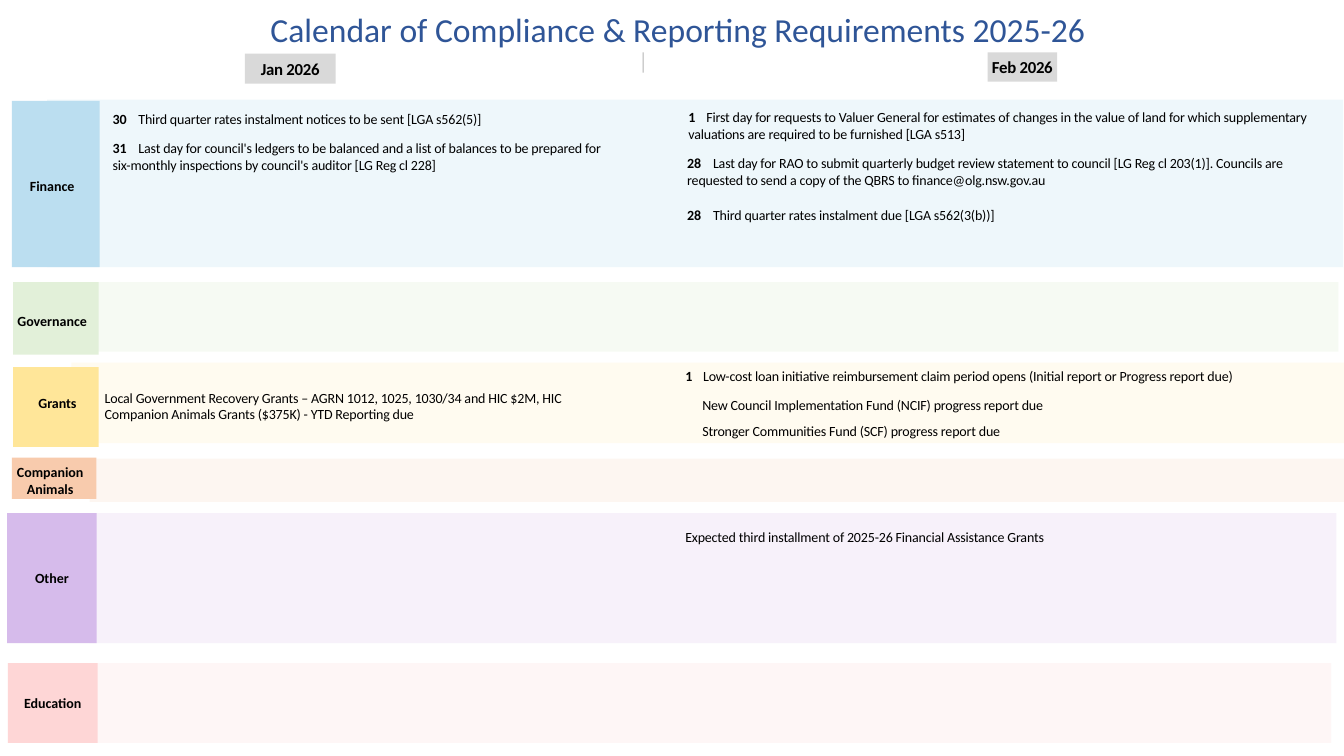
from lxml.etree import SubElement
from pptx import Presentation
from pptx.dml.color import RGBColor
from pptx.enum.shapes import MSO_CONNECTOR, MSO_SHAPE
from pptx.enum.text import MSO_ANCHOR, MSO_AUTO_SIZE, PP_ALIGN
from pptx.oxml.ns import qn
from pptx.util import Cm, Pt

FONT = "Calibri"
BLACK = RGBColor(0x00, 0x00, 0x00)
TITLE_BLUE = RGBColor(0x2F, 0x55, 0x97)
MONTH_GREY = RGBColor(0xD9, 0xD9, 0xD9)
BLUE, BLUE_BAND = RGBColor(0xBB, 0xDE, 0xF0), RGBColor(0xAD, 0xD8, 0xED)
GREEN, GREEN_BAND = RGBColor(0xE2, 0xF0, 0xD9), RGBColor(0xD3, 0xE8, 0xC6)
YELLOW, YELLOW_BAND = RGBColor(0xFF, 0xE6, 0x99), RGBColor(0xFF, 0xEC, 0xB7)
ORANGE, ORANGE_BAND = RGBColor(0xF8, 0xCB, 0xAD), RGBColor(0xF9, 0xD5, 0xBD)
PURPLE, PURPLE_BAND = RGBColor(0xD6, 0xBB, 0xEB), RGBColor(0xD7, 0xBC, 0xEA)
PINK = RGBColor(0xFE, 0xD6, 0xD6)

# Boxes are left, top, width, height in centimetres
# Name, band colour, band box, tile colour, tile box, caption box (None: in the tile)
SECTIONS = [
    ("Finance", BLUE_BAND, (1.19, 2.51, 32.66, 4.22),
     BLUE, (0.3, 2.54, 2.21, 4.19), (-0.03, 4.42, 2.69, 0.51)),
    ("Governance", GREEN_BAND, (2.36, 7.11, 31.37, 1.75),
     GREEN, (0.33, 7.11, 2.16, 1.83), (-0.03, 7.82, 2.69, 0.51)),
    ("Grants", YELLOW_BAND, (1.8, 9.14, 32.54, 2.03),
     YELLOW, (0.33, 9.25, 2.16, 2.01), (0.33, 9.93, 2.24, 0.46)),
    ("Companion Animals", ORANGE_BAND, (2.26, 11.56, 32.03, 1.09),
     ORANGE, (0.3, 11.53, 2.13, 1.04), (-0.08, 11.76, 2.69, 0.71)),
    ("Other", PURPLE_BAND, (2.26, 12.93, 31.42, 3.28),
     PURPLE, (0.18, 12.93, 2.26, 3.28), None),
    ("Education", PINK, (2.26, 16.71, 31.29, 2.01),
     PINK, (0.2, 16.71, 2.26, 2.01), None),
]

MONTHS = [
    ("Jan 2026", (6.17, 1.35, 2.29, 0.76)),
    ("Feb 2026", (24.89, 1.32, 1.75, 0.74)),
]

# Day, text, box
ENTRIES = [
    ("30", "Third quarter rates instalment notices to be sent [LGA s562(5)]",
     (2.84, 2.79, 11.23, 0.43)),
    ("31", "Last day for council's ledgers to be balanced and a list of balances "
     "to be prepared for six-monthly inspections by council's auditor [LG Reg cl 228]",
     (2.84, 3.51, 12.4, 0.86)),
    ("1", "First day for requests to Valuer General for estimates of changes in the value "
     "of land for which supplementary valuations are required to be furnished [LGA s513]",
     (17.35, 2.74, 16.66, 0.86)),
    ("28", "Last day for RAO to submit quarterly budget review statement to council "
     "[LG Reg cl 203(1)]. Councils are requested to send a copy of the QBRS to "
     "finance@olg.nsw.gov.au", (17.32, 3.89, 16.23, 0.86)),
    ("28", "Third quarter rates instalment due [LGA s562(3(b))]",
     (17.32, 5.21, 10.08, 0.43)),
    ("", "Local Government Recovery Grants – AGRN 1012, 1025, 1030/34 and HIC $2M, HIC "
     "Companion Animals Grants ($375K) - YTD Reporting due", (2.64, 9.8, 12.04, 0.86)),
    ("1", "Low-cost loan initiative reimbursement claim period opens "
     "(Initial report or Progress report due)", (17.27, 9.25, 14.76, 0.43)),
    ("", "New Council Implementation Fund (NCIF) progress report due",
     (17.7, 9.98, 11.73, 0.43)),
    ("", "Stronger Communities Fund (SCF) progress report due",
     (17.7, 10.64, 11.73, 0.43)),
    ("", "Expected third installment of 2025-26 Financial Assistance Grants",
     (17.27, 13.31, 12.98, 0.43)),
]


def to_cm(box):
    return [Cm(length) for length in box]


def set_opacity(element, percent):
    color = next(element.iter(qn("a:srgbClr")))
    SubElement(color, qn("a:alpha"), val=str(percent * 1000))


def set_font(font, size, color=BLACK, bold=None):
    font.name, font.size, font.bold = FONT, Pt(size), bold
    font.color.rgb = color


def prepare_frame(shape, wrap=True):
    frame = shape.text_frame
    frame.word_wrap = wrap
    frame.vertical_anchor = MSO_ANCHOR.MIDDLE
    frame.margin_left = frame.margin_right = 0
    frame.margin_top = frame.margin_bottom = 0
    return frame


def add_span(para, text, spacing):
    span = para.add_run()
    span.text = text
    span._r.get_or_add_rPr().set("spc", str(spacing))
    return span


def add_rect(page, box, color, opacity=100):
    rect = page.shapes.add_shape(MSO_SHAPE.RECTANGLE, *to_cm(box))
    rect.shadow.inherit = False
    rect.fill.solid()
    rect.fill.fore_color.rgb = color
    rect.line.fill.background()
    if opacity < 100:
        set_opacity(rect._element.spPr, opacity)
    return rect


def add_caption(shape, text):
    para = prepare_frame(shape).paragraphs[0]
    para.text = text
    para.alignment = PP_ALIGN.CENTER
    set_font(para.font, 10, bold=True)


def add_month(page, text, box):
    frame = prepare_frame(add_rect(page, box, MONTH_GREY), wrap=False)
    para = frame.paragraphs[0]
    para.alignment = PP_ALIGN.CENTER
    set_font(para.font, 12, bold=True)
    add_span(para, text, -20)


def add_entry(page, day, text, box):
    frame = prepare_frame(page.shapes.add_textbox(*to_cm(box)))
    frame.auto_size = MSO_AUTO_SIZE.SHAPE_TO_FIT_TEXT
    para = frame.paragraphs[0]
    if day:
        # The text after the day starts at a tab stop
        stops = SubElement(para._p.get_or_add_pPr(), qn("a:tabLst"))
        stop = Cm(0.65 if len(day) == 2 else 0.45)
        SubElement(stops, qn("a:tab"), pos=str(stop), algn="l")
        add_span(para, day, -10).font.bold = True
        text = "\t" + text
    add_span(para, text, -10)
    set_font(para.font, 10)


def add_divider(page):
    x = Cm(16.21)
    divider = page.shapes.add_connector(
        MSO_CONNECTOR.STRAIGHT, x, Cm(1.32), x, Cm(1.83))
    divider.line.color.rgb = BLACK
    divider.line.width = Pt(0.75)
    set_opacity(divider._element.spPr, 30)
    SubElement(divider._element.spPr, qn("a:effectLst"))


def format_title(page):
    title = page.shapes.title
    title.left, title.top, title.width, title.height = to_cm((6.2, 0.1, 21.77, 1.27))
    frame = title.text_frame
    frame.text = "Calendar of Compliance & Reporting Requirements 2025-26"
    frame.vertical_anchor = MSO_ANCHOR.TOP
    frame.auto_size = MSO_AUTO_SIZE.SHAPE_TO_FIT_TEXT
    para = frame.paragraphs[0]
    para.alignment = PP_ALIGN.CENTER
    set_font(para.font, 24, TITLE_BLUE)


def main():
    deck = Presentation()
    deck.slide_width, deck.slide_height = Cm(33.87), Cm(19.05)
    page = deck.slides.add_slide(deck.slide_layouts[5])

    # Heading row
    format_title(page)
    for month, box in MONTHS:
        add_month(page, month, box)
    add_divider(page)

    # Section bands with their name tiles
    for name, band_color, band_box, tile_color, tile_box, caption_box in SECTIONS:
        add_rect(page, band_box, band_color, opacity=20)
        tile = add_rect(page, tile_box, tile_color)
        if caption_box:
            add_caption(page.shapes.add_textbox(*to_cm(caption_box)), name)
        else:
            add_caption(tile, name)

    # Calendar entries
    for day, text, box in ENTRIES:
        add_entry(page, day, text, box)

    deck.save("out.pptx")


if __name__ == "__main__":
    main()
